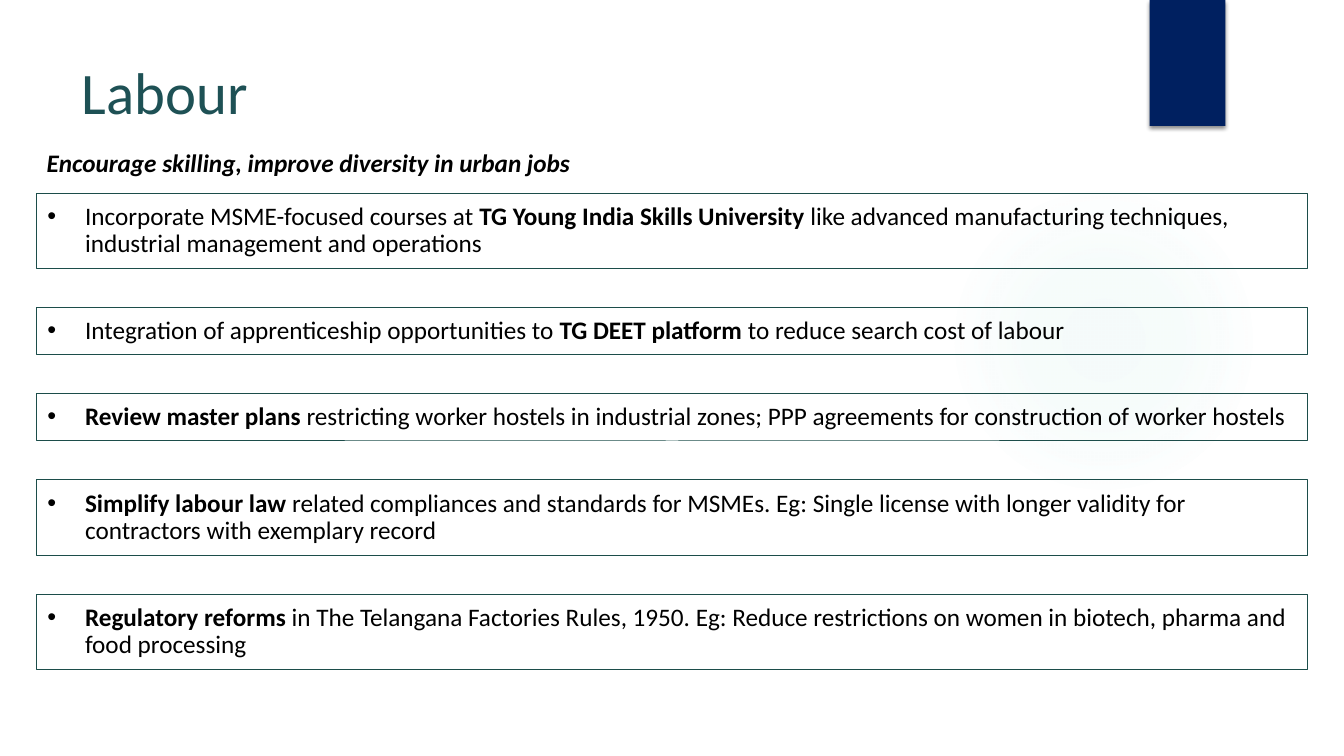
from pptx import Presentation
from pptx.dml.color import RGBColor
from pptx.enum.shapes import MSO_SHAPE
from pptx.enum.text import MSO_ANCHOR, MSO_AUTO_SIZE, PP_ALIGN
from pptx.oxml import parse_xml
from pptx.oxml.ns import nsdecls, qn
from pptx.util import Pt

PX = 9525
RECT, OVAL = MSO_SHAPE.RECTANGLE, MSO_SHAPE.OVAL
TOP, MIDDLE = MSO_ANCHOR.TOP, MSO_ANCHOR.MIDDLE
GROW, FIXED = MSO_AUTO_SIZE.SHAPE_TO_FIT_TEXT, MSO_AUTO_SIZE.NONE
LEFT = PP_ALIGN.LEFT

FONT = "Calibri"
TEAL, EDGE, NAVY, MINT, BLACK = "1E5155", "1C4D4A", "002060", "7CCEC9", "000000"
GAP, PAD, INDENT = 37, 10, 36

# Each point: its lines, then (text, bold) runs
POINTS = [
    (2, [("Incorporate MSME-focused courses at ", False),
         ("TG Young India Skills University ", True),
         ("like advanced manufacturing techniques, industrial management and operations", False)]),
    (1, [("Integration of apprenticeship opportunities to ", False),
         ("TG DEET platform ", True),
         ("to reduce search cost of labour", False)]),
    (1, [("Review master plans ", True),
         ("restricting worker hostels in industrial zones; PPP agreements for "
          "construction of worker hostels", False)]),
    (2, [("Simplify labour law ", True),
         ("related compliances and standards for MSMEs. Eg: Single license with longer "
          "validity for contractors with exemplary record", False)]),
    (2, [("Regulatory reforms", True),
         (" in The Telangana Factories Rules, 1950. Eg: Reduce restrictions on women in "
          "biotech, pharma and food processing", False)]),
]


def px(*nums):
    return [n * PX for n in nums]


def rgb(code):
    return RGBColor.from_string(code)


def style(run, size, color, bold=False, italic=False):
    font = run.font
    font.name, font.size = FONT, Pt(size)
    font.bold, font.italic = bold, italic
    font.color.rgb = rgb(color)


def add_shape(slide, kind, box):
    """Add a preset shape with no fill, line or shadow."""
    shape = slide.shapes.add_shape(kind, *px(*box))
    shape.shadow.inherit = False
    shape.fill.background()
    shape.line.fill.background()
    return shape


def add_glow(slide, box):
    props = add_shape(slide, OVAL, box)._element.spPr
    stops = "".join(
        f'<a:gs pos="{pos * 1000}"><a:srgbClr val="{MINT}">'
        f'<a:alpha val="{alpha * 1000}"/></a:srgbClr></a:gs>'
        for pos, alpha in [(0, 7), (36, 6), (69, 0)])
    grad = parse_xml(
        f'<a:gradFill {nsdecls("a")} rotWithShape="1"><a:gsLst>{stops}</a:gsLst>'
        '<a:path path="circle"><a:fillToRect l="50000" t="50000" r="50000" b="50000"/>'
        '</a:path></a:gradFill>')
    props.replace(props.find(qn("a:noFill")), grad)


def add_tab(slide, box):
    """Add the navy marker that hangs from the top edge."""
    tab = add_shape(slide, RECT, box)
    tab.fill.solid()
    tab.fill.fore_color.rgb = rgb(NAVY)
    tab._element.spPr.find(qn("a:effectLst")).append(parse_xml(
        f'<a:outerShdw {nsdecls("a")} blurRad="{Pt(3)}" dist="{Pt(2)}" dir="5400000" '
        f'rotWithShape="0"><a:srgbClr val="{BLACK}"><a:alpha val="45000"/></a:srgbClr>'
        '</a:outerShdw>'))


def set_title(slide, box, text):
    title = slide.shapes.title
    title.left, title.top, title.width, title.height = px(*box)
    frame = title.text_frame
    frame.text = text
    frame.vertical_anchor, frame.auto_size = TOP, FIXED
    para = frame.paragraphs[0]
    para.alignment = LEFT
    style(para.runs[0], 42, TEAL)


def add_lead(slide, box, text):
    frame = slide.shapes.add_textbox(*px(*box)).text_frame
    frame.word_wrap, frame.auto_size = True, GROW
    frame.text = text
    style(frame.paragraphs[0].runs[0], 18, BLACK, bold=True, italic=True)


def add_point(slide, box, parts):
    shape = add_shape(slide, RECT, box)
    shape.line.color.rgb = rgb(EDGE)
    shape.line.width = Pt(0.75)
    frame = shape.text_frame
    frame.word_wrap, frame.auto_size = True, GROW
    frame.vertical_anchor = MIDDLE
    (frame.margin_left, frame.margin_top,
     frame.margin_right, frame.margin_bottom) = px(PAD, PAD, PAD, PAD)
    para = frame.paragraphs[0]
    para.alignment, para.line_spacing = LEFT, 0.9
    props = para._p.get_or_add_pPr()
    props.set("marL", str(INDENT * PX))
    props.set("indent", str(-INDENT * PX))
    for bit in (f'buClr {nsdecls("a")}><a:srgbClr val="{BLACK}"/></a:buClr',
                f'buFont {nsdecls("a")} typeface="Arial"/',
                f'buChar {nsdecls("a")} char="•"/'):
        props.append(parse_xml(f"<a:{bit}>"))
    for text, bold in parts:
        run = para.add_run()
        run.text = text
        style(run, 18, BLACK, bold)


def add_points(slide, left, top, width):
    """Stack the outlined points with an equal gap."""
    for lines, parts in POINTS:
        height = 18 + 27 * lines
        add_point(slide, (left, top, width, height), parts)
        top += height + GAP


def main():
    deck = Presentation()
    deck.slide_width, deck.slide_height = px(1280, 720)
    slide = deck.slides.add_slide(deck.slide_layouts[5])
    add_glow(slide, (903, 176, 296, 296))
    add_tab(slide, (1095, 0, 72, 120))
    set_title(slide, (68, 48, 988, 147), "Labour")
    add_lead(slide, (35, 136, 892, 38), "Encourage skilling, improve diversity in urban jobs")
    add_points(slide, 35, 184, 1210)
    deck.save("out.pptx")


if __name__ == "__main__":
    main()
